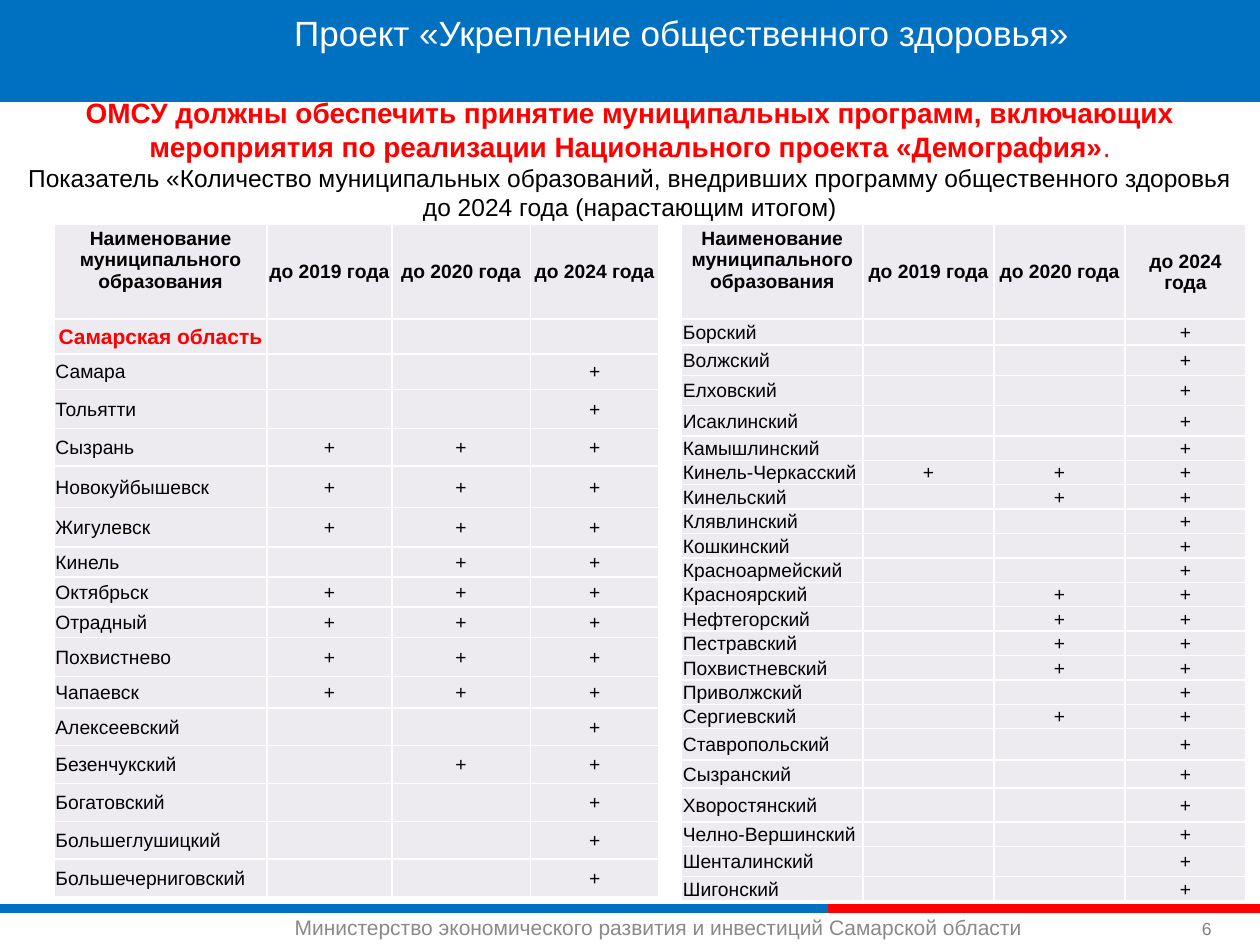
from lxml.etree import SubElement
from pptx import Presentation
from pptx.dml.color import RGBColor
from pptx.enum.shapes import MSO_CONNECTOR, MSO_SHAPE
from pptx.enum.text import MSO_ANCHOR, PP_ALIGN
from pptx.oxml.ns import qn
from pptx.util import Inches, Pt

COLORS = {"blue": "0070C1", "red": "FF0000", "white": "FFFFFF", "black": "000000",
          "gray": "808080", "footer": "898989", "cell": "EDEAF0"}
FONT = "Arial"
TITLE = "Проект «Укрепление общественного здоровья»"
DEMAND = ("ОМСУ должны обеспечить принятие муниципальных программ, включающих "
          "мероприятия по реализации Национального проекта «Демография»")
INDICATOR = ("Показатель «Количество муниципальных образований, внедривших программу "
             "общественного здоровья до 2024 года (нарастающим итогом)")
FOOTER = "Министерство экономического развития и инвестиций Самарской области"
HEADER = ["Наименование муниципального образования",
          "до 2019 года", "до 2020 года", "до 2024 года"]
REGION = "Самарская область"
HEADER_HEIGHT = 0.75

# name, number of final columns marked, row height
TABLES = [
    {"left": 0.43, "columns": [1.69, 0.99, 1.1, 1.02], "rows": [
        (REGION, 0, 0.28), ("Самара", 1, 0.28), ("Тольятти", 1, 0.31),
        ("Сызрань", 3, 0.3), ("Новокуйбышевск", 3, 0.33), ("Жигулевск", 3, 0.31),
        ("Кинель", 2, 0.24), ("Октябрьск", 3, 0.24), ("Отрадный", 3, 0.24),
        ("Похвистнево", 3, 0.31), ("Чапаевск", 3, 0.25), ("Алексеевский", 1, 0.3),
        ("Безенчукский", 2, 0.3), ("Богатовский", 1, 0.3),
        ("Большеглушицкий", 1, 0.3), ("Большечерниговский", 1, 0.3)]},
    {"left": 5.41, "columns": [1.44, 1.04, 1.04, 0.96], "rows": [
        ("Борский", 1, 0.21), ("Волжский", 1, 0.24), ("Елховский", 1, 0.24),
        ("Исаклинский", 1, 0.24), ("Камышлинский", 1, 0.19),
        ("Кинель-Черкасский", 3, 0.19), ("Кинельский", 2, 0.19),
        ("Клявлинский", 1, 0.19), ("Кошкинский", 1, 0.19),
        ("Красноармейский", 1, 0.19), ("Красноярский", 2, 0.19),
        ("Нефтегорский", 2, 0.19), ("Пестравский", 2, 0.19),
        ("Похвистневский", 2, 0.19), ("Приволжский", 1, 0.19),
        ("Сергиевский", 2, 0.19), ("Ставропольский", 1, 0.25),
        ("Сызранский", 1, 0.22), ("Хворостянский", 1, 0.27),
        ("Челно-Вершинский", 1, 0.19), ("Шенталинский", 1, 0.24),
        ("Шигонский", 1, 0.19)]},
]


def color(name):
    return RGBColor.from_string(COLORS[name])


def write(paragraph, text, size=11, fill="black", bold=False, align=PP_ALIGN.LEFT):
    paragraph.alignment = align
    span = paragraph.add_run()
    span.text = text
    span.font.name, span.font.size, span.font.bold = FONT, Pt(size), bold
    span.font.color.rgb = color(fill)


def add_box(page, left, top, width, height, anchor=MSO_ANCHOR.TOP):
    box = page.shapes.add_textbox(*map(Inches, (left, top, width, height)))
    box.text_frame.word_wrap = True
    box.text_frame.vertical_anchor = anchor
    return box.text_frame


def add_stripe(page, start, end, fill):
    line = page.shapes.add_connector(MSO_CONNECTOR.STRAIGHT, Inches(start), Inches(7.21),
                                     Inches(end), Inches(7.21))
    line.line.color.rgb = color(fill)
    line.line.width = Pt(5)
    SubElement(line._element.spPr, qn("a:effectLst"))


def style_cell(cell):
    cell.margin_left = cell.margin_right = cell.margin_top = Inches(0.01)
    cell.margin_bottom = 0
    cell.vertical_anchor = MSO_ANCHOR.MIDDLE
    properties = cell._tc.get_or_add_tcPr()
    for side in ("lnL", "lnR", "lnT", "lnB"):
        border = SubElement(properties, qn(f"a:{side}"), w=str(Pt(1)))
        SubElement(SubElement(border, qn("a:solidFill")), qn("a:srgbClr"), val=COLORS["white"])
    cell.fill.solid()
    cell.fill.fore_color.rgb = color("cell")


def fill_cell(cell, text, **text_format):
    style_cell(cell)
    paragraph = cell.text_frame.paragraphs[0]
    if text:
        write(paragraph, text, **text_format)
    else:
        SubElement(paragraph._p, qn("a:endParaRPr"), sz="1100")


def add_municipalities(page, left, columns, rows):
    heights = [HEADER_HEIGHT] + [height for _, _, height in rows]
    table = page.shapes.add_table(len(heights), len(columns), Inches(left), Inches(1.78),
                                  Inches(sum(columns)), Inches(sum(heights))).table
    table.first_row = table.horz_banding = False
    for column, width in zip(table.columns, columns):
        column.width = Inches(width)
    for row, height in zip(table.rows, heights):
        row.height = Inches(height)
    for index, text in enumerate(HEADER):
        fill_cell(table.cell(0, index), text, bold=True, align=PP_ALIGN.CENTER)
    name_header = table.cell(0, 0)
    name_header.vertical_anchor = MSO_ANCHOR.TOP
    name_header.margin_top = Inches(0.03)
    region_format = {"size": 12, "fill": "red", "bold": True, "align": PP_ALIGN.CENTER}
    for index, (name, marked, _) in enumerate(rows, 1):
        fill_cell(table.cell(index, 0), name, **(region_format if name == REGION else {}))
        for column in range(1, len(columns)):
            mark = "+" if column >= len(columns) - marked else ""
            fill_cell(table.cell(index, column), mark, align=PP_ALIGN.CENTER)


def main():
    deck = Presentation()
    deck.slide_width, deck.slide_height = Inches(10), Inches(7.5)
    page = deck.slides.add_slide(deck.slide_layouts[6])

    add_stripe(page, 0, 6.57, "blue")
    write(add_box(page, 2.24, 7.21, 6.54, 0.3).paragraphs[0], FOOTER, size=12, fill="footer")
    add_stripe(page, 6.57, 10, "red")

    banner = page.shapes.add_shape(MSO_SHAPE.RECTANGLE, 0, Inches(-0.03), Inches(10), Inches(0.84))
    banner.shadow.inherit = False
    banner.fill.solid()
    banner.fill.fore_color.rgb = color("blue")
    banner.line.fill.background()

    number = add_box(page, 9.44, 7.1, 0.56, 0.4, anchor=MSO_ANCHOR.BOTTOM)
    write(number.paragraphs[0], "6", size=10, fill="gray")

    intro = add_box(page, 0, 0.71, 10, 1.11)
    demand = intro.paragraphs[0]
    write(demand, DEMAND, size=16, fill="red", bold=True, align=PP_ALIGN.CENTER)
    write(demand, ".", size=16, fill="red", align=PP_ALIGN.CENTER)
    write(intro.add_paragraph(), INDICATOR, size=14, align=PP_ALIGN.CENTER)

    for table in TABLES:
        add_municipalities(page, **table)

    title = add_box(page, 0.85, 0.04, 9.12, 0.44)
    write(title.paragraphs[0], TITLE, size=20, fill="white", align=PP_ALIGN.CENTER)
    deck.save("out.pptx")


if __name__ == "__main__":
    main()
